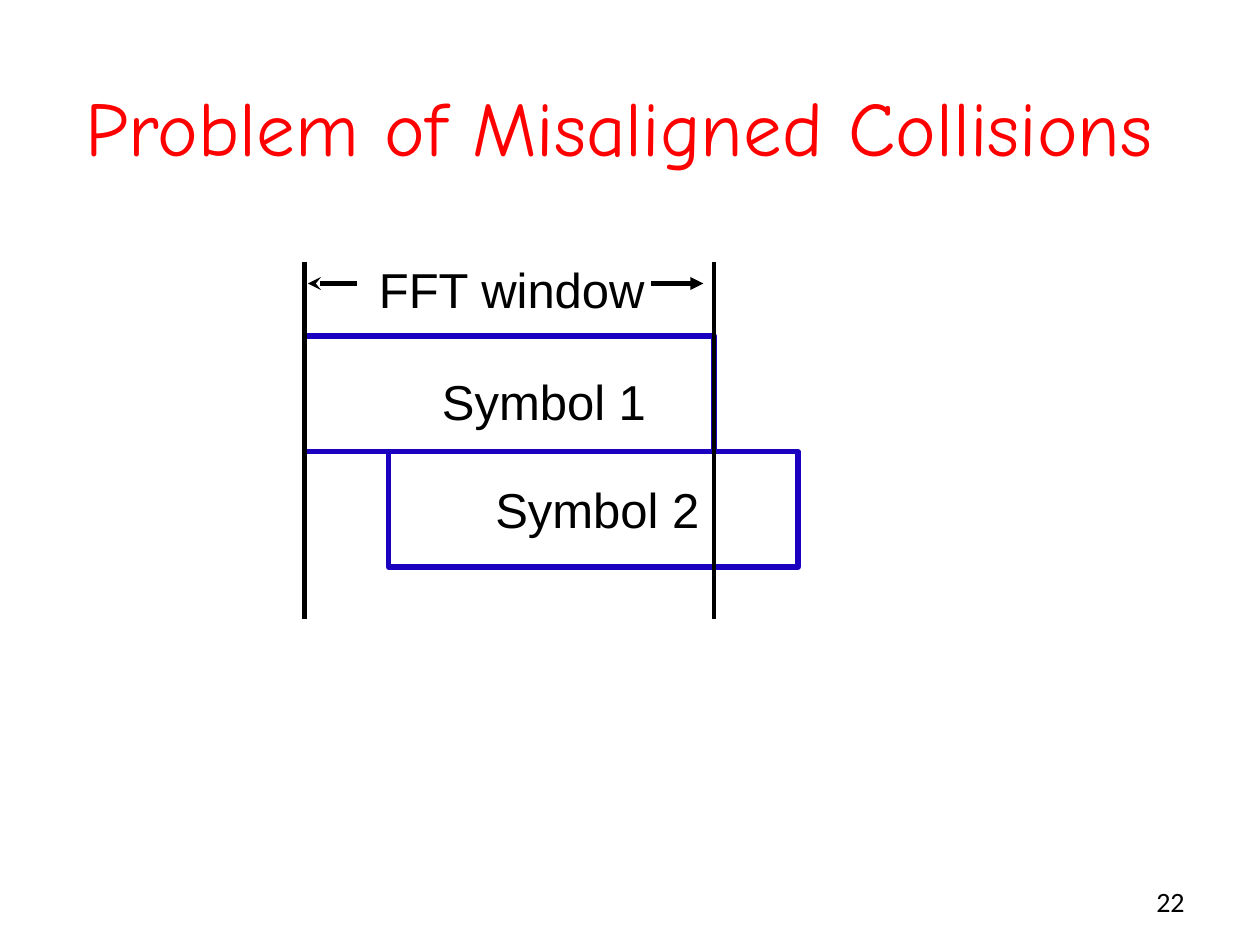
from pptx import Presentation
from pptx.dml.color import RGBColor
from pptx.enum.shapes import MSO_CONNECTOR, MSO_SHAPE
from pptx.enum.text import MSO_ANCHOR, MSO_AUTO_SIZE, PP_ALIGN
from pptx.oxml.ns import qn
from pptx.util import Pt
from lxml import etree

LINE, RECT = MSO_CONNECTOR.STRAIGHT, MSO_SHAPE.RECTANGLE
TOP, MID = MSO_ANCHOR.TOP, MSO_ANCHOR.MIDDLE
LEFT, MIDST, RIGHT = PP_ALIGN.LEFT, PP_ALIGN.CENTER, PP_ALIGN.RIGHT
FIXED, GROW = MSO_AUTO_SIZE.NONE, MSO_AUTO_SIZE.SHAPE_TO_FIT_TEXT

HUES = {"title": "FF0000", "ink": "000000", "box": "1B00C0"}


class Sheet:
    font, size, thin, thick = "Arial", 28, 2.5, 3

    def __init__(self, deck):
        self.slide = deck.slides.add_slide(deck.slide_layouts[5])

    def hue(self, name):
        return RGBColor.from_string(HUES[name])

    def label(self, shape, words, font, size, hue, align, anchor):
        frame = shape.text_frame
        frame.vertical_anchor = anchor
        para = frame.paragraphs[0]
        para.alignment = align
        run = para.add_run()
        run.text = words
        run.font.name, run.font.size = font, Pt(size)
        run.font.color.rgb = self.hue(hue)

    def title(self, words, x, y, w, h):
        shape = self.slide.shapes.title
        shape.left, shape.top, shape.width, shape.height = map(Pt, (x, y, w, h))
        shape.text_frame.auto_size = FIXED
        self.label(shape, words, "Comic Neue", 44, "title", MIDST, MID)

    def text(self, words, x, y, w, h, font=font, size=size,
             align=LEFT, anchor=TOP, wrap=False):
        shape = self.slide.shapes.add_textbox(*map(Pt, (x, y, w, h)))
        shape.text_frame.word_wrap = wrap
        shape.text_frame.auto_size = FIXED if wrap else GROW
        self.label(shape, words, font, size, "ink", align, anchor)

    def box(self, x, y, w, h):
        shape = self.slide.shapes.add_shape(RECT, *map(Pt, (x, y, w, h)))
        shape.shadow.inherit = False
        shape.fill.background()
        shape.line.color.rgb = self.hue("box")
        shape.line.width = Pt(self.thick)

    def line(self, x1, y1, x2, y2, end=None, tip=None):
        shape = self.slide.shapes.add_connector(LINE, *map(Pt, (x1, y1, x2, y2)))
        shape.line.color.rgb = self.hue("ink")
        shape.line.width = Pt(self.thin)
        props = shape._element.spPr
        if end:
            mark = etree.SubElement(props.find(qn("a:ln")), qn(end))
            mark.set("type", tip)
        etree.SubElement(props, qn("a:effectLst"))


def main():
    deck = Presentation()
    deck.slide_width, deck.slide_height = Pt(720), Pt(540)
    sheet = Sheet(deck)

    # Title and slide number
    sheet.title("Problem of Misaligned Collisions", 0, 12, 708, 120)
    sheet.text("22", 516, 500.5, 168, 28.75, "Calibri", 16, RIGHT, MID, True)

    # Two symbols, the second one shifted
    start, wide, high, top, shift = 174, 234, 66, 192, 48
    for row in range(2):
        sheet.box(start + row * shift, top + row * high, wide, high)
    sheet.text("Symbol 1", 245.5, 209, 132.5, 41)
    sheet.text("Symbol 2", 276, 270.5, 132.5, 41)

    # Window edges
    for x in (start, start + wide):
        sheet.line(x, 150, x, 354)

    # Window label between its arrows
    sheet.text("FFT window", 209.5, 145, 168.5, 41)
    sheet.line(176, 162, 204, 162, "a:headEnd", "stealth")
    sheet.line(372, 162, 402, 162, "a:tailEnd", "triangle")

    deck.save("out.pptx")


if __name__ == "__main__":
    main()
